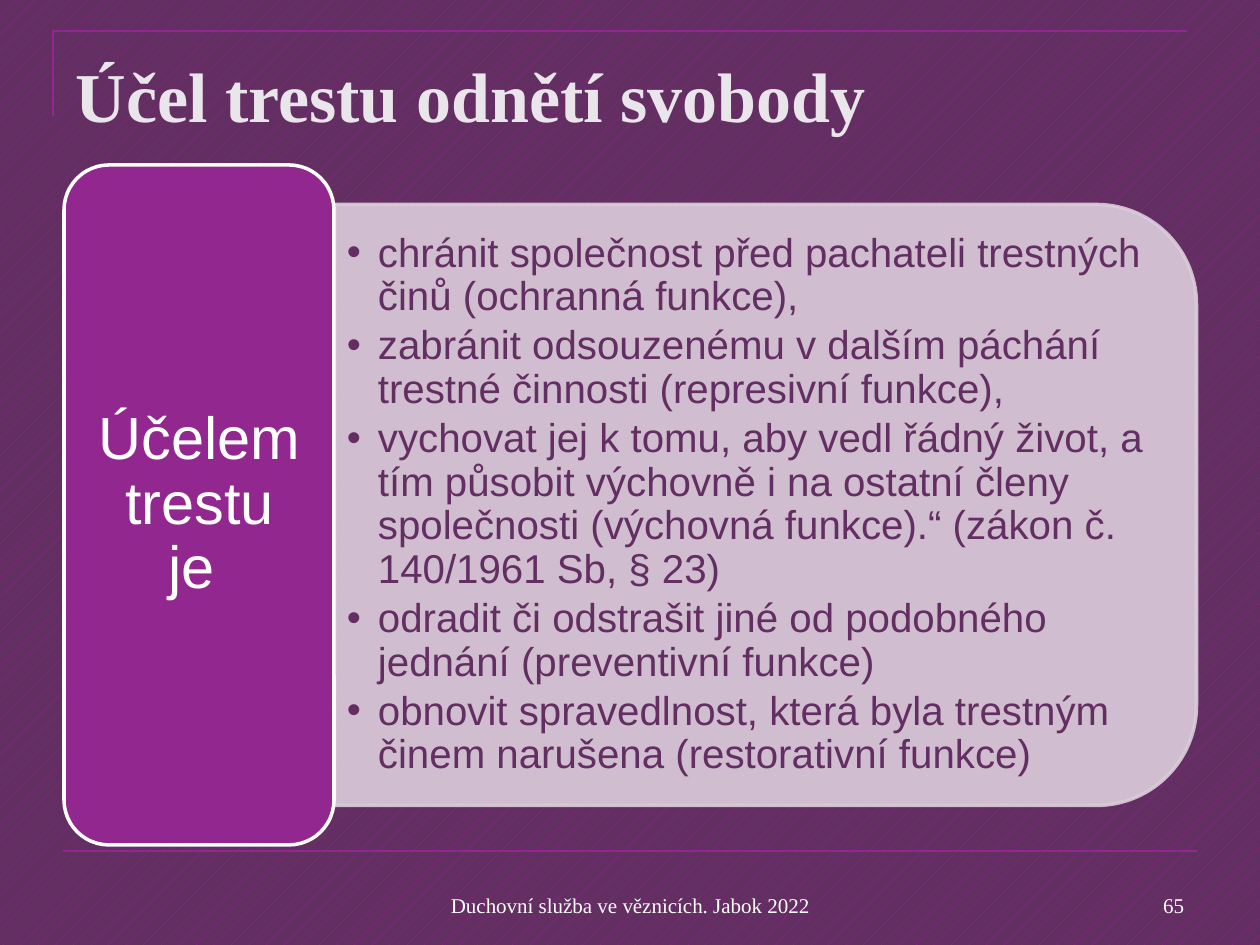
from lxml import etree
from pptx import Presentation
from pptx.dml.color import RGBColor
from pptx.enum.dml import MSO_PATTERN
from pptx.enum.shapes import MSO_CONNECTOR, MSO_SHAPE
from pptx.enum.text import MSO_ANCHOR as ANCHOR, PP_ALIGN as ALIGN
from pptx.oxml.ns import qn
from pptx.util import Emu, Pt

SCALE = 914400 / 126
COLORS = {
    "plum": "632E62",
    "violet": "92278F",
    "pale": "DCCDDB",
    "title": "EAE5EB",
    "white": "FFFFFF",
}
SERIF, SANS = "Times New Roman", "Arial"
PURPOSES = [
    "chránit společnost před pachateli trestných činů (ochranná funkce),",
    "zabránit odsouzenému v dalším páchání trestné činnosti (represivní funkce),",
    "vychovat jej k tomu, aby vedl řádný život, a tím působit výchovně i na "
    "ostatní členy společnosti (výchovná funkce).“ (zákon č. 140/1961 Sb, § 23)",
    "odradit či odstrašit jiné od podobného jednání (preventivní funkce)",
    "obnovit spravedlnost, která byla trestným činem narušena (restorativní funkce)",
]


def px(length):
    return Emu(round(length * SCALE))


def color(name):
    return RGBColor.from_string(COLORS[name])


def set_line(shape, name, points):
    shape.line.color.rgb = color(name)
    shape.line.width = Pt(points)


def make_translucent(shape, percent):
    for rgb in shape._element.spPr.iter(qn("a:srgbClr")):
        etree.SubElement(rgb, qn("a:alpha"), val=str(percent * 1000))


def add_bullet(paragraph, indent):
    properties = paragraph._p.get_or_add_pPr()
    properties.set("marL", str(px(indent)))
    properties.set("indent", str(-px(indent)))
    etree.SubElement(properties, qn("a:buFont"), typeface=SANS)
    etree.SubElement(properties, qn("a:buChar"), char="•")


def add_text(slide, box, paragraphs, size, ink="white", font=SERIF, bold=False,
             align=ALIGN.LEFT, anchor=ANCHOR.MIDDLE, insets=(13, 6),
             spacing=None, after=0, indent=0):
    frame = slide.shapes.add_textbox(*map(px, box)).text_frame
    frame.word_wrap = True
    frame.vertical_anchor = anchor
    frame.margin_left = frame.margin_right = px(insets[0])
    frame.margin_top = frame.margin_bottom = px(insets[1])
    for index, text in enumerate(paragraphs):
        paragraph = frame.add_paragraph() if index else frame.paragraphs[0]
        paragraph.alignment = align
        paragraph.line_spacing = spacing
        paragraph.space_after = Pt(after)
        if indent:
            add_bullet(paragraph, indent)
        run = paragraph.add_run()
        run.text = text
        run.font.name = font
        run.font.size = Pt(size)
        run.font.bold = bold
        run.font.color.rgb = color(ink)


def add_panel(slide, preset, box, fill, outline, rotation=0):
    panel = slide.shapes.add_shape(preset, *map(px, box))
    panel.shadow.inherit = False
    panel.rotation = rotation
    panel.fill.solid()
    panel.fill.fore_color.rgb = color(fill)
    set_line(panel, outline, 2)
    return panel


def add_frame_lines(slide):
    builder = slide.shapes.build_freeform(px(53), px(116))
    builder.add_line_segments([(px(53), px(31)), (px(1187), px(31))], close=False)
    corner = builder.convert_to_shape()
    corner.shadow.inherit = False
    corner.fill.background()
    set_line(corner, "violet", 1.5)
    rule = slide.shapes.add_connector(
        MSO_CONNECTOR.STRAIGHT, px(63), px(851), px(1197), px(851))
    set_line(rule, "violet", 1.5)
    etree.SubElement(rule._element.spPr, qn("a:effectLst"))


def set_background(slide):
    fill = slide.background.fill
    fill.patterned()
    fill.pattern = MSO_PATTERN.PERCENT_5
    fill.fore_color.rgb = color("violet")
    fill.back_color.rgb = color("plum")


def main():
    """Build the slide on the purpose of imprisonment."""
    deck = Presentation()
    deck.slide_width, deck.slide_height = px(1260), px(945)
    slide = deck.slides.add_slide(deck.slide_layouts[6])
    set_background(slide)
    add_frame_lines(slide)
    add_text(slide, (63, 38, 1134, 186), ["Účel trestu odnětí svobody"], 40,
             ink="title", bold=True, anchor=ANCHOR.TOP, insets=(13, 15))

    purposes = add_panel(slide, MSO_SHAPE.ROUND_2_SAME_RECTANGLE,
                         (465, 74, 601, 862), "pale", "pale", rotation=90)
    make_translucent(purposes, 90)
    add_text(slide, (334, 234, 833, 542), PURPOSES, 23, ink="plum", font=SANS,
             spacing=0.9, after=3.4, indent=31)
    add_panel(slide, MSO_SHAPE.ROUNDED_RECTANGLE, (64, 165, 270, 680),
              "violet", "white")
    add_text(slide, (78, 178, 243, 654), ["Účelem trestu je "], 34, font=SANS,
             align=ALIGN.CENTER, insets=(18, 9), spacing=0.9, after=11.9)

    add_text(slide, (431, 861, 399, 63), ["Duchovní služba ve věznicích. Jabok 2022"],
             12, align=ALIGN.CENTER, anchor=ANCHOR.BOTTOM)
    add_text(slide, (903, 861, 294, 63), ["65"], 12,
             align=ALIGN.RIGHT, anchor=ANCHOR.BOTTOM)
    deck.save("out.pptx")


if __name__ == "__main__":
    main()
